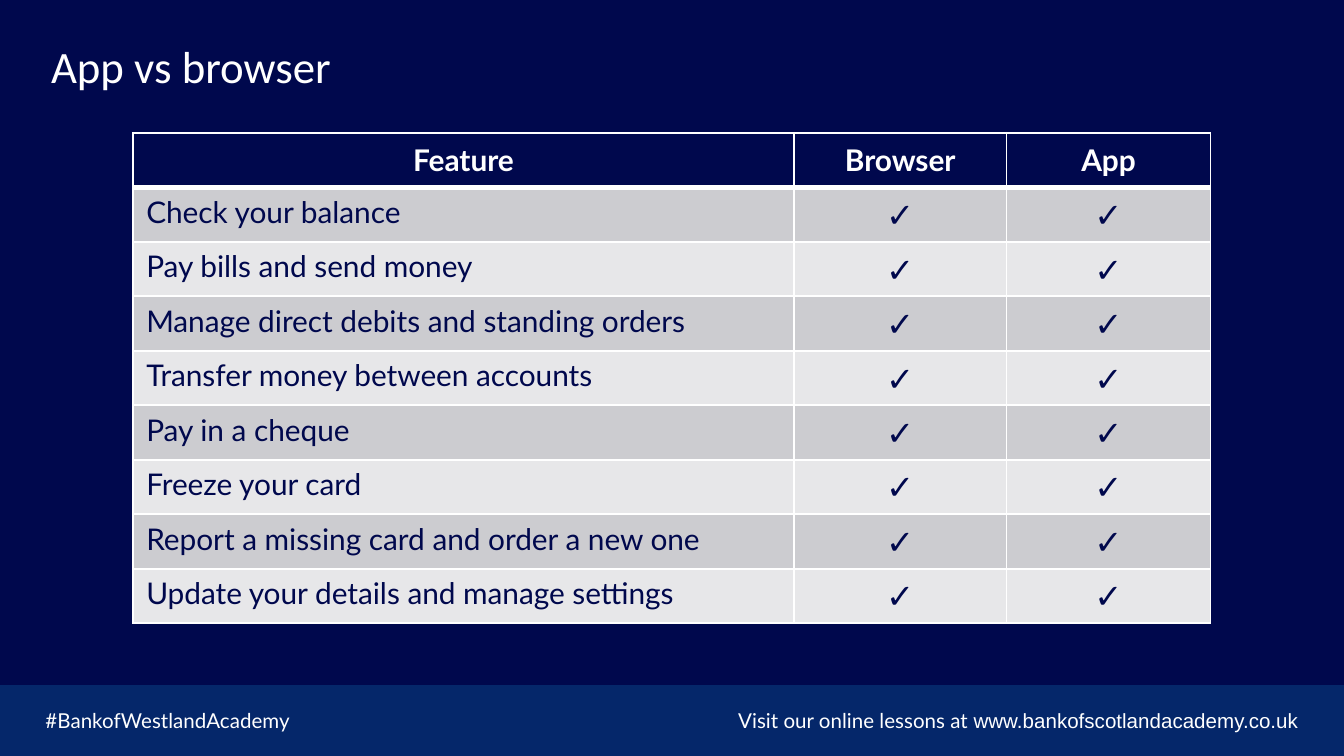
from dataclasses import dataclass

from lxml import etree
from pptx import Presentation
from pptx.dml.color import RGBColor
from pptx.enum.shapes import MSO_SHAPE
from pptx.enum.text import MSO_ANCHOR, MSO_AUTO_SIZE, PP_ALIGN
from pptx.oxml.ns import qn
from pptx.util import Cm, Pt

LEFT, MID, RIGHT = PP_ALIGN.LEFT, PP_ALIGN.CENTER, PP_ALIGN.RIGHT
TOP, CENTER = MSO_ANCHOR.TOP, MSO_ANCHOR.MIDDLE
RECT = MSO_SHAPE.RECTANGLE
GROW = MSO_AUTO_SIZE.SHAPE_TO_FIT_TEXT


@dataclass(frozen=True)
class Theme:
    navy: str = "00084D"
    blue: str = "05276A"
    white: str = "FFFFFF"
    bands: tuple = ("CCCCD0", "E7E7E9")
    face: str = "Lato"
    plain: str = "Arial"
    head: str = "Calibri"
    title: int = 24
    body: int = 16
    tick: int = 18
    foot: int = 11


THEME = Theme()
HEADS = ("Feature", "Browser", "App")
ITEMS = (
    "Check your balance",
    "Pay bills and send money",
    "Manage direct debits and standing orders",
    "Transfer money between accounts",
    "Pay in a cheque",
    "Freeze your card",
    "Report a missing card and order a new one",
    "Update your details and manage settings",
)
WIDTHS = (12.5, 4.01, 3.86)
ROW = 1.03


def paint(fill, color):
    fill.solid()
    fill.fore_color.rgb = RGBColor.from_string(color)


def add_run(para, text, size, color=THEME.white, face=THEME.face, bold=False):
    run = para.add_run()
    run.text = text
    font = run.font
    font.size, font.name, font.bold = Pt(size), face, bold
    font.color.rgb = RGBColor.from_string(color)


def add_title(slide, text):
    title = slide.shapes.title
    title.left, title.top = Cm(0.71), Cm(0.71)
    title.width, title.height = Cm(11.5), Cm(1.2)
    frame = title.text_frame
    frame.word_wrap = True
    frame.auto_size = GROW
    frame.vertical_anchor = CENTER
    para = frame.paragraphs[0]
    para.alignment = LEFT
    para.line_spacing = 0.9
    add_run(para, text, THEME.title, face=THEME.head)


def add_band(slide, top, width, height):
    band = slide.shapes.add_shape(RECT, 0, top, width, height)
    band.shadow.inherit = False
    paint(band.fill, THEME.blue)
    band.line.fill.background()


def add_note(slide, left, width, align, runs):
    box = slide.shapes.add_textbox(Cm(left), Cm(13.26), Cm(width), Cm(0.74))
    frame = box.text_frame
    frame.word_wrap = True
    frame.auto_size = GROW
    para = frame.paragraphs[0]
    para.alignment = align
    for text, face in runs:
        add_run(para, text, THEME.foot, face=face)


def add_edge(props, side, points):
    edge = etree.SubElement(props, qn(f"a:ln{side}"), w=str(Pt(points)))
    fill = etree.SubElement(edge, qn("a:solidFill"))
    etree.SubElement(fill, qn("a:srgbClr"), val=THEME.white)


def fill_cell(cell, text, fill, size, color, align, anchor, row):
    props = cell._tc.get_or_add_tcPr()
    for side in "LRTB":
        thick = (row, side) in ((0, "B"), (1, "T"))
        add_edge(props, side, 3 if thick else 1)
    paint(cell.fill, fill)
    cell.vertical_anchor = anchor
    para = cell.text_frame.paragraphs[0]
    para.alignment = align
    add_run(para, text, size, color, bold=row == 0)


def add_grid(slide):
    rows = [HEADS] + [(item, "✓", "✓") for item in ITEMS]
    frame = slide.shapes.add_table(
        len(rows), len(HEADS), Cm(2.51), Cm(2.51),
        Cm(sum(WIDTHS)), Cm(ROW * len(rows)))
    table = frame.table
    for col, width in zip(table.columns, WIDTHS):
        col.width = Cm(width)
    for r, texts in enumerate(rows):
        table.rows[r].height = Cm(ROW)
        for c, text in enumerate(texts):
            if r == 0:
                look = THEME.navy, THEME.body, THEME.white, MID, CENTER
            else:
                size, align, anchor = (
                    (THEME.tick, MID, CENTER) if c
                    else (THEME.body, LEFT, TOP))
                fill = THEME.bands[(r - 1) % 2]
                look = fill, size, THEME.navy, align, anchor
            fill_cell(table.cell(r, c), text, *look, r)


def main():
    deck = Presentation()
    deck.slide_width, deck.slide_height = Cm(25.4), Cm(14.29)
    slide = deck.slides.add_slide(deck.slide_layouts[5])
    paint(slide.background.fill, THEME.navy)
    top = Cm(12.95)
    add_band(slide, top, deck.slide_width, deck.slide_height - top)
    add_note(slide, 0.61, 5.28, LEFT,
             [("#BankofWestlandAcademy", THEME.face)])
    add_note(slide, 12.7, 12.09, RIGHT,
             [("Visit our online lessons at ", THEME.face),
              ("www.bankofscotlandacademy.co.uk", THEME.plain)])
    add_title(slide, "App vs browser")
    add_grid(slide)
    deck.save("out.pptx")


if __name__ == "__main__":
    main()
